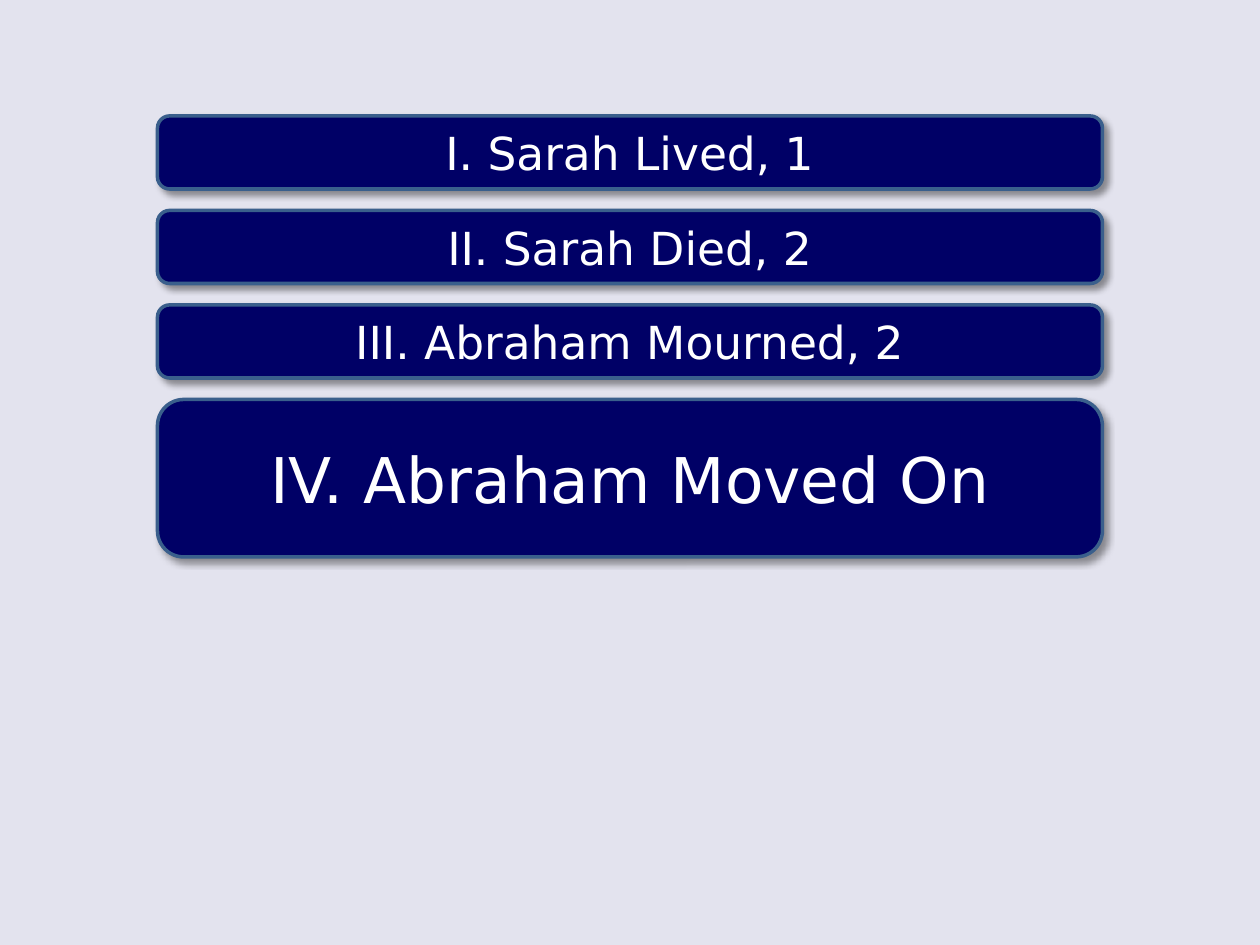
from dataclasses import dataclass

from lxml import etree
from pptx import Presentation
from pptx.dml.color import RGBColor
from pptx.enum.shapes import MSO_SHAPE
from pptx.enum.text import MSO_ANCHOR, PP_ALIGN
from pptx.oxml.ns import qn
from pptx.util import Inches, Pt

ROUNDED = MSO_SHAPE.ROUNDED_RECTANGLE
MIDDLE = MSO_ANCHOR.MIDDLE
CENTER = PP_ALIGN.CENTER


@dataclass(frozen=True)
class Theme:
    background: RGBColor = RGBColor(0xE3, 0xE3, 0xEE)
    bar: RGBColor = RGBColor(0x00, 0x00, 0x66)
    outline: RGBColor = RGBColor(0x3A, 0x5F, 0x8C)
    text: RGBColor = RGBColor(0xFF, 0xFF, 0xFF)
    shadow: str = "000000"
    font: str = "DejaVu Sans"
    past_size: int = 26
    current_size: int = 36


def add_shadow(shape):
    shape.shadow.inherit = False
    effects = shape._element.spPr.find(qn("a:effectLst"))
    shadow = etree.SubElement(
        effects, qn("a:outerShdw"), blurRad=str(Pt(4)), dist=str(Pt(3)),
        dir=str(45 * 60000), algn="tl", rotWithShape="0")
    color = etree.SubElement(shadow, qn("a:srgbClr"), val=theme.shadow)
    etree.SubElement(color, qn("a:alpha"), val="40000")


theme = Theme()
presentation = Presentation()
presentation.slide_width = Inches(10)
presentation.slide_height = Inches(7.5)
slide = presentation.slides.add_slide(presentation.slide_layouts[6])
slide.background.fill.solid()
slide.background.fill.fore_color.rgb = theme.background

outline_points = [
    ("I. Sarah Lived, 1", 0.58, theme.past_size),
    ("II. Sarah Died, 2", 0.58, theme.past_size),
    ("III. Abraham Mourned, 2", 0.58, theme.past_size),
    ("IV. Abraham Moved On", 1.25, theme.current_size),
]
first_top, step = 0.92, 0.75

for index, (text, height, size) in enumerate(outline_points):
    shape = slide.shapes.add_shape(
        ROUNDED, Inches(1.25), Inches(first_top + index * step),
        Inches(7.5), Inches(height))
    shape.fill.solid()
    shape.fill.fore_color.rgb = theme.bar
    shape.line.color.rgb = theme.outline
    shape.line.width = Pt(2)
    add_shadow(shape)

    frame = shape.text_frame
    frame.vertical_anchor = MIDDLE
    paragraph = frame.paragraphs[0]
    paragraph.alignment = CENTER
    run = paragraph.add_run()
    run.text = text
    font_format = {"name": theme.font, "size": Pt(size)}
    for attribute, value in font_format.items():
        setattr(run.font, attribute, value)
    run.font.color.rgb = theme.text

presentation.save("out.pptx")
